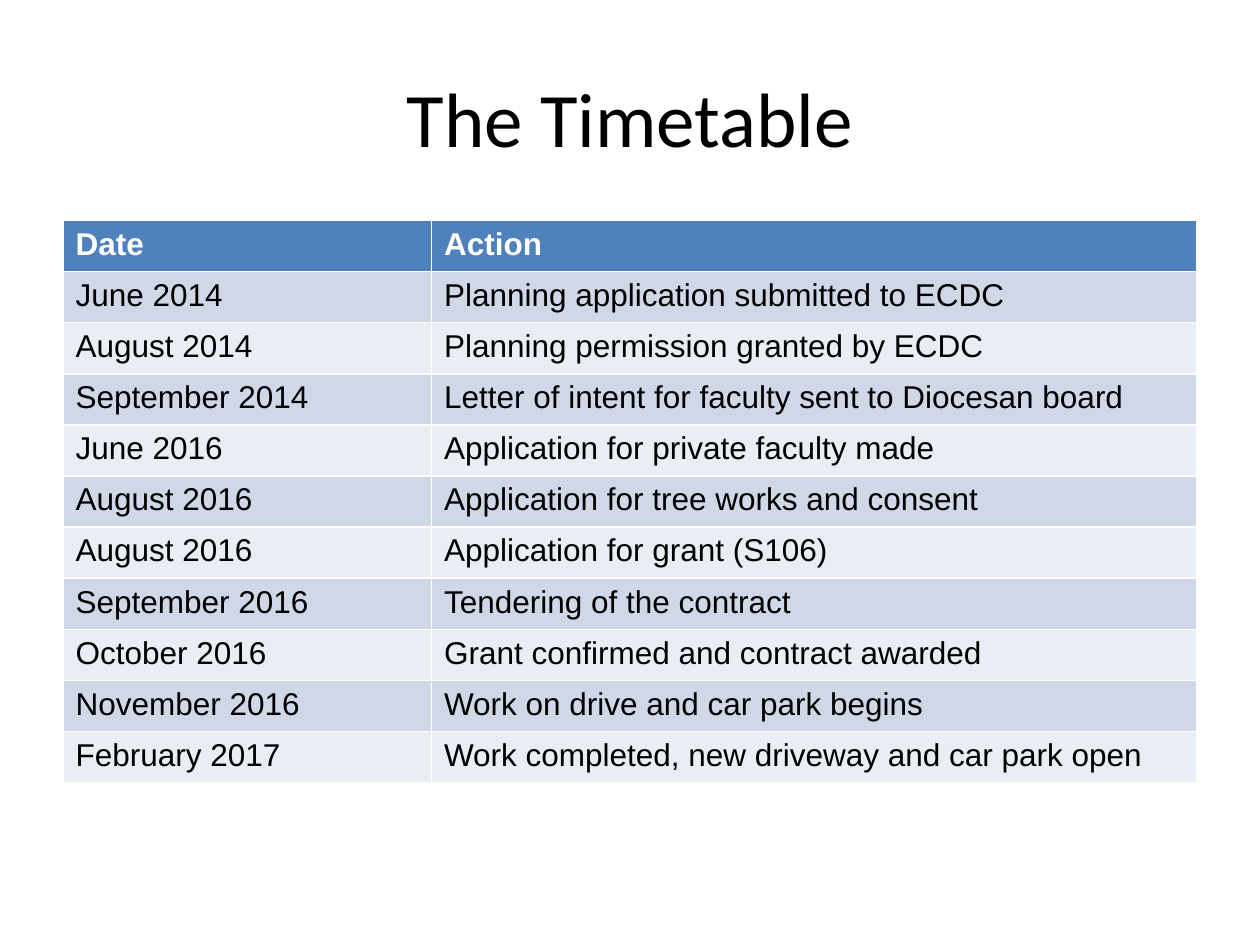
"""Build the timetable slide with a title and a two-column table."""
import pptx
import pptx.dml.color
import pptx.enum.text
import pptx.util

Pt = pptx.util.Pt
RGBColor = pptx.dml.color.RGBColor
BLACK = RGBColor(0x00, 0x00, 0x00)
WHITE = RGBColor(0xFF, 0xFF, 0xFF)
HEADER_BLUE = RGBColor(0x4F, 0x81, 0xBD)
BAND_DARK = RGBColor(0xD0, 0xD8, 0xE8)
BAND_LIGHT = RGBColor(0xE9, 0xED, 0xF4)

TIMETABLE = [
    ("Date", "Action"),
    ("June 2014", "Planning application submitted to ECDC"),
    ("August 2014", "Planning permission granted by ECDC"),
    ("September 2014", "Letter of intent for faculty sent to Diocesan board"),
    ("June 2016", "Application for private faculty made"),
    ("August 2016", "Application for tree works and consent"),
    ("August 2016", "Application for grant (S106)"),
    ("September 2016", "Tendering of the contract"),
    ("October 2016", "Grant confirmed and contract awarded"),
    ("November 2016", "Work on drive and car park begins"),
    ("February 2017", "Work completed, new driveway and car park open"),
]


class Page:
    """Hold the style and the current slide."""

    title_format = {"name": "Calibri", "size": Pt(44), "bold": False}
    header_format = {"name": "Arial", "size": Pt(18), "bold": True}
    body_format = {"name": "Arial", "size": Pt(18), "bold": False}

    def __init__(self, deck):
        self.slide = deck.slides.add_slide(deck.slide_layouts[5])

    def add_text(self, frame, text, font_format, color):
        para = frame.paragraphs[0]
        span = para.add_run()
        span.text = text
        for name, value in font_format.items():
            setattr(span.font, name, value)
        span.font.color.rgb = color
        return para

    def add_title(self, text, left, top, width, height):
        box = self.slide.shapes.title
        place = {"left": left, "top": top, "width": width, "height": height}
        for name, value in place.items():
            setattr(box, name, Pt(value))
        box.text_frame.vertical_anchor = pptx.enum.text.MSO_ANCHOR.MIDDLE
        para = self.add_text(box.text_frame, text, self.title_format, BLACK)
        para.alignment = pptx.enum.text.PP_ALIGN.CENTER

    def add_table(self, rows, left, top, widths, row_height):
        table = self.slide.shapes.add_table(
            len(rows), len(widths), Pt(left), Pt(top),
            Pt(sum(widths)), Pt(row_height * len(rows))).table
        for column, width in zip(table.columns, widths):
            column.width = Pt(width)
        for row_index, texts in enumerate(rows):
            table.rows[row_index].height = Pt(row_height)
            if row_index == 0:
                fill, font_format, color = HEADER_BLUE, self.header_format, WHITE
            else:
                fill = BAND_DARK if row_index % 2 else BAND_LIGHT
                font_format, color = self.body_format, BLACK
            for column_index, text in enumerate(texts):
                cell = table.cell(row_index, column_index)
                cell.fill.solid()
                cell.fill.fore_color.rgb = fill
                self.add_text(cell.text_frame, text, font_format, color)


def main():
    deck = pptx.Presentation()
    deck.slide_width, deck.slide_height = Pt(720), Pt(540)
    page = Page(deck)
    page.add_title("The Timetable", 36, 21.6, 648, 90)
    page.add_table(TIMETABLE, 36, 126, (210.6, 437.4), 29.2)
    deck.save("out.pptx")


if __name__ == "__main__":
    main()
